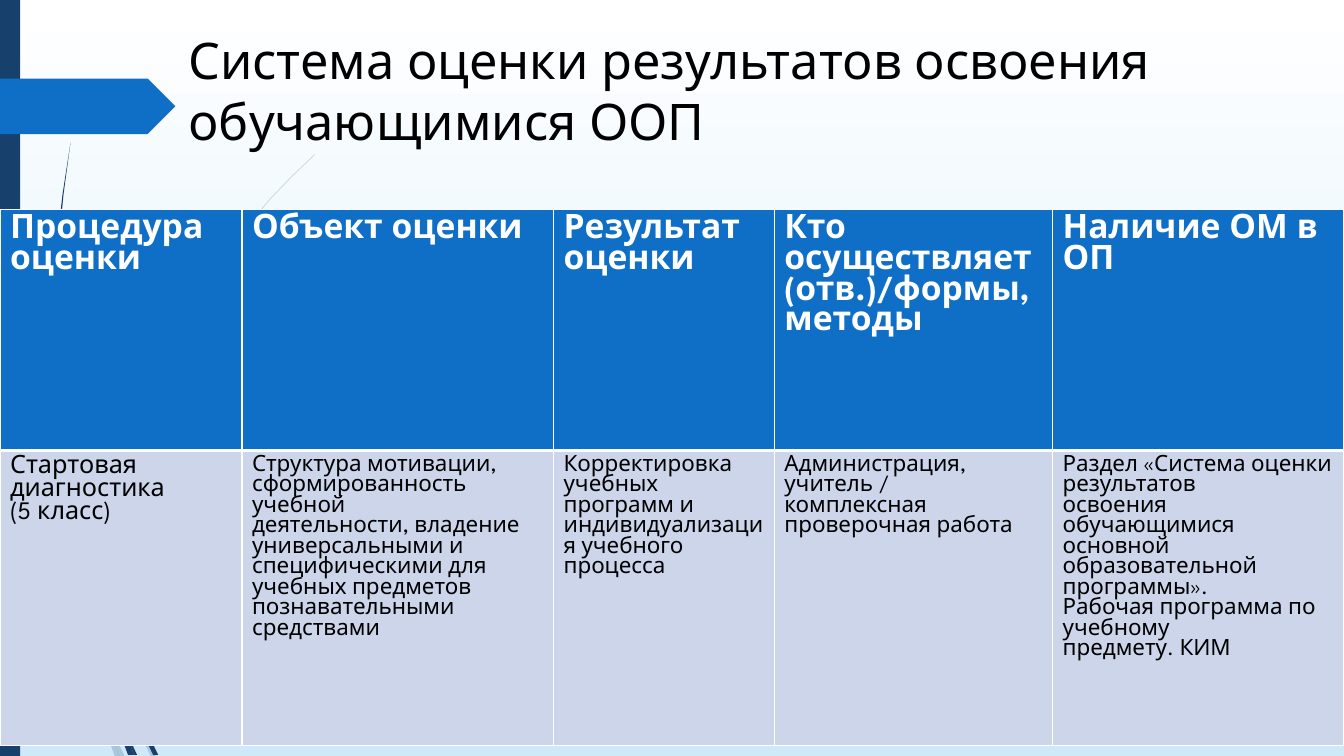
import pptx
import pptx.util
import pptx.dml.color
import pptx.enum.shapes
import pptx.enum.text
import pptx.oxml
import pptx.oxml.ns

Inches, Pt = pptx.util.Inches, pptx.util.Pt
SHAPE = pptx.enum.shapes.MSO_SHAPE
ANCHOR = pptx.enum.text.MSO_ANCHOR

FONT = "League Spartan"
NAVY, BLUE, PALE, WHITE, BLACK = "17406D", "0F6FC6", "CCD5EA", "FFFFFF", "000000"
TITLE = "Система оценки результатов освоения обучающимися ООП"
HEAD = [
    ["Процедура", "оценки"],
    ["Объект оценки"],
    ["Результат оценки"],
    ["Кто осуществляет", "(отв.)/формы, методы"],
    ["Наличие ОМ в ОП"],
]
BODY = [
    ["Стартовая", "диагностика", "(5 класс)"],
    ["Структура мотивации, сформированность учебной",
     "деятельности, владение универсальными и",
     "специфическими для учебных предметов",
     "познавательными средствами"],
    ["Корректировка учебных", "программ и",
     "индивидуализация учебного", "процесса"],
    ["Администрация, учитель /", "комплексная проверочная работа"],
    ["Раздел «Система оценки результатов",
     "освоения обучающимися основной",
     "образовательной программы».",
     "Рабочая программа по учебному",
     "предмету. КИМ"],
]
COLS = [2.4, 3.09, 2.19, 2.76, 2.89]
ROWS = [2.39, 2.93]
SIZES = [[24] * 5, [18, 16, 16, 16, 16]]

FAINT = [
    [(0.92, 6.07), (0.88, 5.96), (0.88, 6.1), (1.23, 6.94), (1.5, 7.51),
     (1.55, 7.51), (1.27, 6.92)],
    [(1.19, 7.51), (1.24, 7.51), (1.05, 7.11)],
    [(0.88, 5.84), (1.1, 4.62), (1.6, 3.49), (2.29, 2.45), (2.68, 1.98),
     (2.9, 1.75), (3.12, 1.54), (3.12, 1.53), (2.89, 1.75), (2.68, 1.97),
     (2.28, 2.44), (1.58, 3.48), (1.07, 4.61), (0.85, 5.84), (0.88, 5.96)],
    [(1.01, 7.14), (1.14, 7.51), (1.19, 7.51)],
    [(0.96, 6.92), (0.93, 6.83), (0.99, 7.07), (1.01, 7.14), (1.19, 7.51),
     (1.05, 7.11)],
]
SOLID = [
    [(1.13, 6.49), (1.1, 6.41), (1.11, 6.56), (1.32, 7.08), (1.52, 7.49),
     (1.57, 7.49), (1.36, 7.06)],
    [(0.6, 4.72), (0.58, 4.53), (0.54, 3.49), (0.58, 2.45), (0.63, 1.93),
     (0.7, 1.41), (0.62, 1.93), (0.56, 2.45), (0.52, 3.49), (0.55, 4.49)],
    [(1.33, 7.49), (1.36, 7.49), (1.22, 7.19)],
    [(1.17, 7.22), (1.27, 7.49), (1.31, 7.49)],
    [(1.16, 7.06), (1.1, 6.91), (1.16, 7.17), (1.17, 7.22), (1.3, 7.49),
     (1.33, 7.49), (1.22, 7.19)],
]


def rgb(code):
    return pptx.dml.color.RGBColor.from_string(code)


def node(tag, **attrs):
    item = pptx.oxml.parse_xml(f"<a:{tag} {pptx.oxml.ns.nsdecls('a')}/>")
    for key, value in attrs.items():
        item.set(key, str(value))
    return item


def paint(shape, code):
    shape.shadow.inherit = False
    shape.fill.solid()
    shape.fill.fore_color.rgb = rgb(code)
    shape.line.fill.background()


def trace(points, alpha=None):
    spots = [(Inches(x), Inches(y)) for x, y in points]
    pen = slide.shapes.build_freeform(*spots[0])
    pen.add_line_segments(spots[1:], close=True)
    shape = pen.convert_to_shape()
    paint(shape, NAVY)
    if alpha:
        tint = shape.fill._xPr.find(".//" + pptx.oxml.ns.qn("a:srgbClr"))
        tint.append(node("alpha", val=alpha * 1000))


def write(frame, lines, size, code, bold):
    frame.word_wrap = True
    for i, line in enumerate(lines):
        para = frame.paragraphs[0] if i == 0 else frame.add_paragraph()
        para.text = line
        font = para.font
        font.name, font.size, font.bold = FONT, Pt(size), bold
        font.color.rgb = rgb(code)


def edge(cell, widths):
    props = cell._tc.get_or_add_tcPr()
    for i, (side, width) in enumerate(zip("LRTB", widths)):
        line = node("ln" + side, w=Pt(width))
        fill = node("solidFill")
        fill.append(node("srgbClr", val=WHITE))
        line.append(fill)
        props.insert(i, line)


deck = pptx.Presentation()
deck.slide_width, deck.slide_height = Inches(13.33), Inches(7.5)
slide = deck.slides.add_slide(deck.slide_layouts[6])

back = slide.background.fill
back.gradient()
back.gradient_angle = 270
for stop, place, code in zip(back.gradient_stops, (0, 1), (WHITE, "CEEAF9")):
    stop.position = place
    stop.color.rgb = rgb(code)

for points in FAINT:
    trace(points, 20)
for points in SOLID:
    trace(points)

for kind, top, width, height, code in [
    (SHAPE.RECTANGLE, 0, 0.2, 7.5, NAVY),
    (SHAPE.PENTAGON, 0.78, 1.74, 0.55, BLUE),
]:
    paint(slide.shapes.add_shape(
        kind, 0, Inches(top), Inches(width), Inches(height)), code)

title = slide.shapes.add_textbox(
    Inches(1.77), Inches(0.19), Inches(11.38), Inches(1.4)).text_frame
title.vertical_anchor = ANCHOR.MIDDLE
write(title, [TITLE], 36, BLACK, False)

table = slide.shapes.add_table(
    2, 5, 0, Inches(2.08), Inches(sum(COLS)), Inches(sum(ROWS))).table
for col, width in zip(table.columns, COLS):
    col.width = Inches(width)
for row, height in zip(table.rows, ROWS):
    row.height = Inches(height)
for r, texts in enumerate([HEAD, BODY]):
    top = r == 0
    for c, lines in enumerate(texts):
        cell = table.cell(r, c)
        write(cell.text_frame, lines, SIZES[r][c], WHITE if top else BLACK, top)
        cell.fill.solid()
        cell.fill.fore_color.rgb = rgb(BLUE if top else PALE)
        edge(cell, (1, 1, 1, 3) if top else (1, 1, 3, 1))

deck.save("out.pptx")
